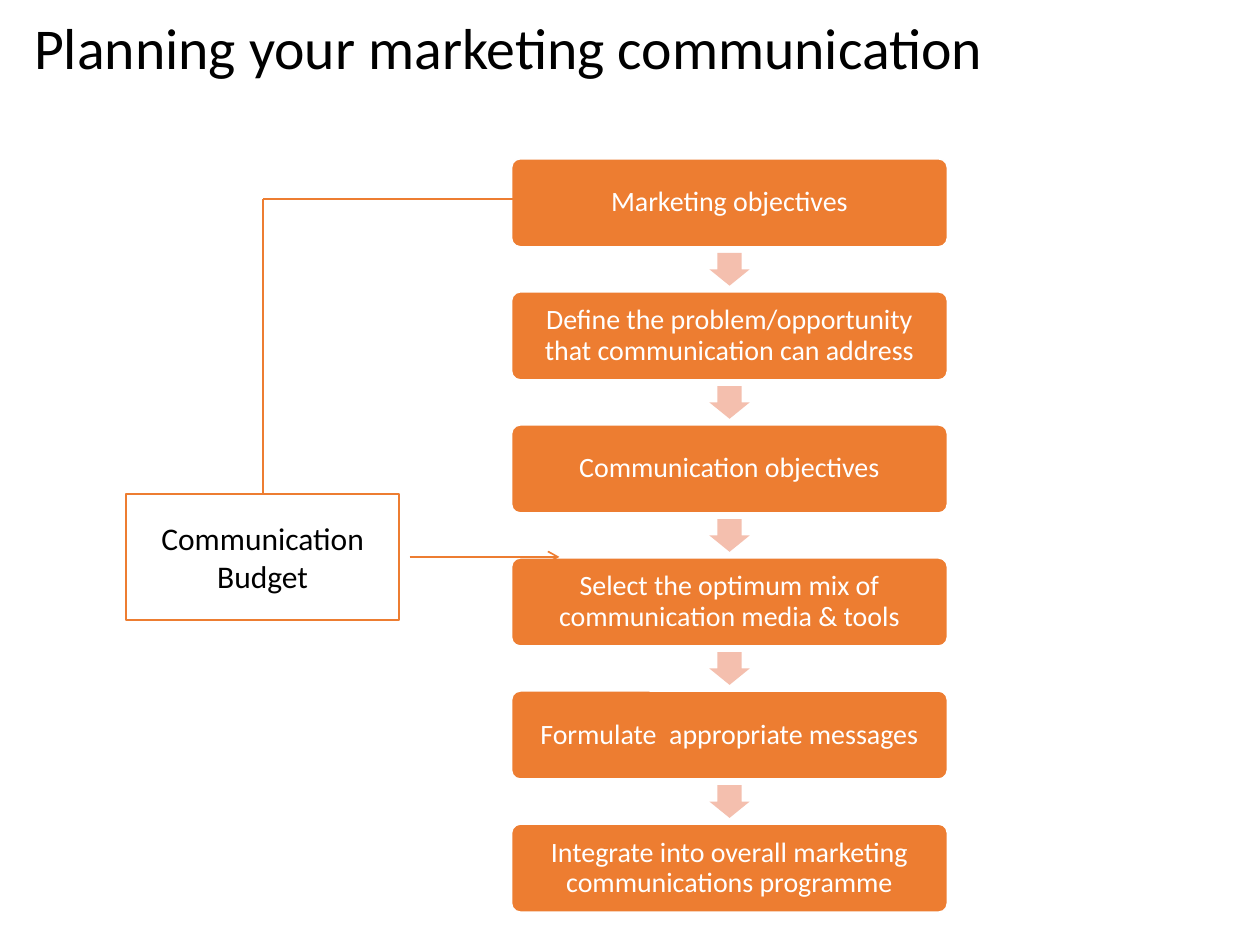
from dataclasses import dataclass

from lxml import etree
from pptx import Presentation
from pptx.dml.color import RGBColor
from pptx.enum.shapes import MSO_CONNECTOR, MSO_SHAPE
from pptx.enum.text import MSO_ANCHOR, MSO_AUTO_SIZE, PP_ALIGN
from pptx.oxml.ns import qn
from pptx.util import Inches, Pt

ROUNDED, RECTANGLE = MSO_SHAPE.ROUNDED_RECTANGLE, MSO_SHAPE.RECTANGLE
ARROW, STRAIGHT = MSO_SHAPE.RIGHT_ARROW, MSO_CONNECTOR.STRAIGHT
LEFT, CENTER = PP_ALIGN.LEFT, PP_ALIGN.CENTER

TITLE = "Planning your marketing communication"
STEPS = [
    "Marketing objectives",
    "Define the problem/opportunity that communication can address",
    "Communication objectives",
    "Select the optimum mix of communication media & tools",
    "Formulate  appropriate messages",
    "Integrate into overall marketing communications programme",
]
BUDGET = "Communication Budget"


@dataclass(frozen=True)
class Theme:
    font: str = "Calibri"
    accent: RGBColor = RGBColor(0xED, 0x7D, 0x31)
    pale: RGBColor = RGBColor(0xF4, 0xBF, 0xAE)
    white: RGBColor = RGBColor(0xFF, 0xFF, 0xFF)
    black: RGBColor = RGBColor(0, 0, 0)
    title_size: int = 33
    budget_size: int = 18
    step_size: int = 16
    line_width: int = 1


THEME = Theme()

STEP_LEFT, STEP_TOP, STEP_WIDTH, STEP_HEIGHT = 4.06, 1.26, 3.46, 0.7
STEP_PITCH = 1.056
ARROW_LENGTH, ARROW_WIDTH = 0.26, 0.32
BUDGET_LEFT, BUDGET_TOP, BUDGET_WIDTH, BUDGET_HEIGHT = 1, 3.92, 2.17, 1
LINK_TOP = 1.58


def write_text(shape, text, size, color, align=CENTER, spacing=1.0, inset=0.1):
    frame = shape.text_frame
    frame.word_wrap = True
    frame.auto_size = MSO_AUTO_SIZE.NONE
    frame.vertical_anchor = MSO_ANCHOR.MIDDLE
    frame.margin_left = frame.margin_right = Inches(inset)
    frame.margin_top = frame.margin_bottom = Inches(min(inset, 0.05))
    para = frame.paragraphs[0]
    para.alignment = align
    para.line_spacing = spacing
    para.space_before = Pt(0)
    span = para.add_run()
    span.text = text
    span.font.name = THEME.font
    span.font.size = Pt(size)
    span.font.color.rgb = color


def add_box(page, kind, left, top, width, height, fill, line=None):
    box = page.shapes.add_shape(
        kind, Inches(left), Inches(top), Inches(width), Inches(height))
    box.shadow.inherit = False
    box.fill.solid()
    box.fill.fore_color.rgb = fill
    if line is None:
        box.line.fill.background()
    else:
        box.line.color.rgb = line
        box.line.width = Pt(THEME.line_width)
    return box


def add_line(page, start, end, arrowhead=False):
    points = [Inches(value) for value in (*start, *end)]
    line = page.shapes.add_connector(STRAIGHT, *points)
    line.line.color.rgb = THEME.accent
    line.line.width = Pt(THEME.line_width)
    if arrowhead:
        outline = line.line._get_or_add_ln()
        etree.SubElement(outline, qn("a:tailEnd"), type="arrow")
    etree.SubElement(line._element.spPr, qn("a:effectLst"))


def add_title(page):
    title = page.shapes.title
    title.left, title.top = Inches(0.17), Inches(0.13)
    title.width, title.height = Inches(9.03), Inches(0.58)
    write_text(title, TITLE, THEME.title_size, THEME.black,
               align=LEFT, spacing=0.8)


def add_steps(page):
    gap = STEP_PITCH - STEP_HEIGHT
    arrow_left = STEP_LEFT + (STEP_WIDTH - ARROW_LENGTH) / 2
    for index, text in enumerate(STEPS):
        top = STEP_TOP + index * STEP_PITCH
        box = add_box(page, ROUNDED, STEP_LEFT, top, STEP_WIDTH, STEP_HEIGHT,
                      THEME.accent, THEME.white)
        box.adjustments[0] = 0.1
        write_text(box, text, THEME.step_size, THEME.white,
                   spacing=0.9, inset=0.09)
        if index < len(STEPS) - 1:
            arrow_top = top + STEP_HEIGHT + (gap - ARROW_WIDTH) / 2
            arrow = add_box(page, ARROW, arrow_left, arrow_top,
                            ARROW_LENGTH, ARROW_WIDTH, THEME.pale)
            arrow.rotation = 90
            arrow.adjustments[0] = 0.6
            arrow.adjustments[1] = 0.5


def add_budget(page):
    center = BUDGET_LEFT + BUDGET_WIDTH / 2
    middle = BUDGET_TOP + BUDGET_HEIGHT / 2
    add_line(page, (3.25, middle), (4.44, middle), arrowhead=True)
    box = add_box(page, RECTANGLE, BUDGET_LEFT, BUDGET_TOP, BUDGET_WIDTH,
                  BUDGET_HEIGHT, THEME.white, THEME.accent)
    write_text(box, BUDGET, THEME.budget_size, THEME.black)
    add_line(page, (center, BUDGET_TOP), (center, LINK_TOP))
    add_line(page, (4.25, LINK_TOP), (center, LINK_TOP))


def main():
    deck = Presentation()
    deck.slide_width, deck.slide_height = Inches(10), Inches(7.5)
    page = deck.slides.add_slide(deck.slide_layouts[5])
    add_title(page)
    add_steps(page)
    add_budget(page)
    deck.save("out.pptx")


if __name__ == "__main__":
    main()
